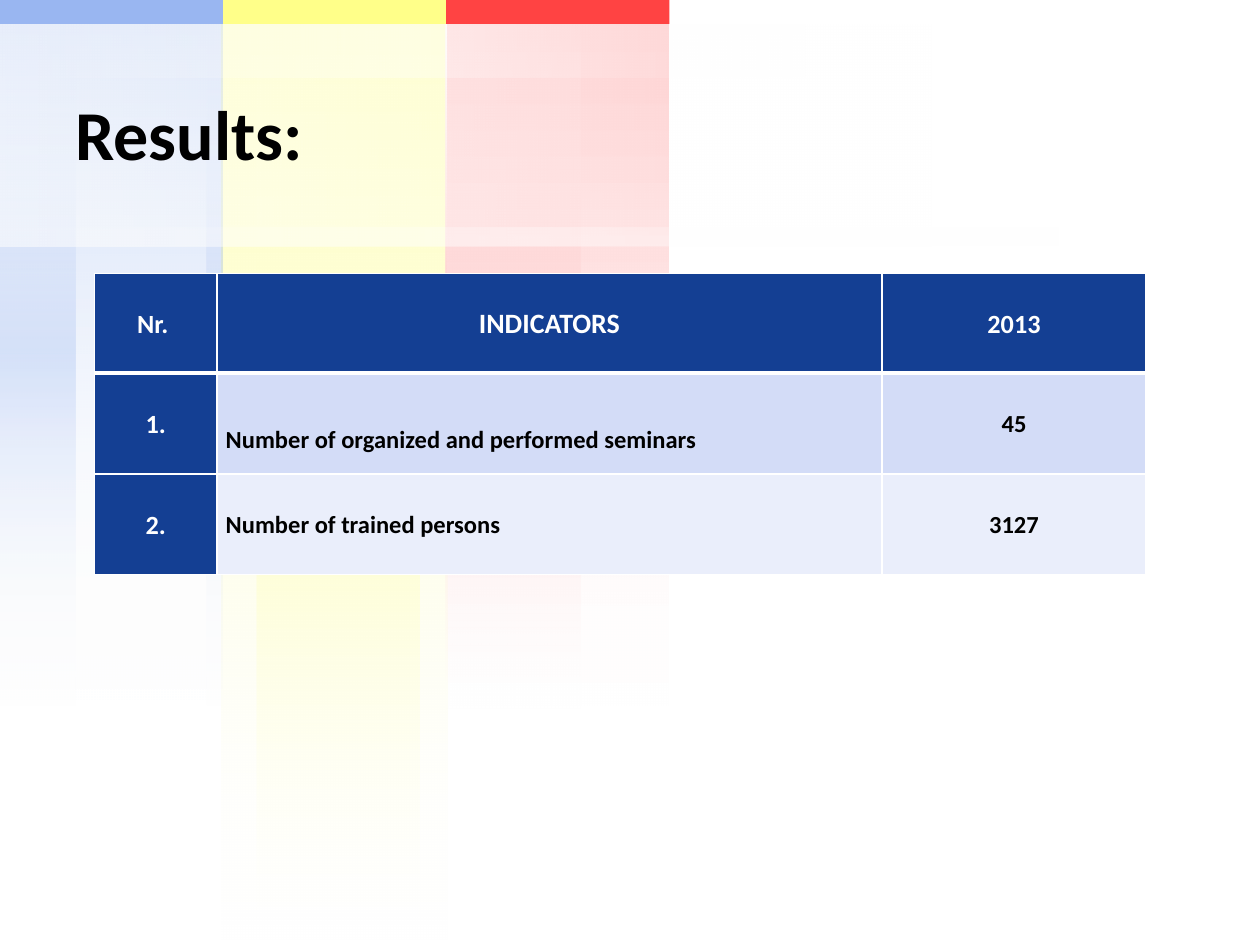
from lxml import etree
from pptx import Presentation
from pptx.dml.color import RGBColor
from pptx.enum.shapes import MSO_SHAPE
from pptx.enum.text import MSO_ANCHOR, PP_ALIGN
from pptx.oxml.ns import qn
from pptx.util import Pt

RECTANGLE = MSO_SHAPE.RECTANGLE
MIDDLE = MSO_ANCHOR.MIDDLE
LEFT, CENTER = PP_ALIGN.LEFT, PP_ALIGN.CENTER

THEME = {
    "font": "Calibri",
    "white": "FFFFFF", "black": "000000",
    "yellow": "FFFFBD", "pink": "FFC9C9", "blue": "6491EA",
    "bar_blue": "99B6F1", "bar_yellow": "FFFF89", "bar_red": "FF4343",
    "header": "143F93", "row_fills": ("D3DCF7", "EAEEFB"),
    "title_size": 40, "heading_size": 16, "label_size": 15, "body_size": 14,
}

TITLE = "Results:"
HEADER = ("Nr. ", "INDICATORS", "2013")
ROWS = (
    ("1.", "Number of organized and performed seminars", "45"),
    ("2.", "Number of trained persons", "3127"),
)
COLUMN_WIDTHS = (70, 380, 151)
ROW_HEIGHTS = (57, 57.6, 57.6)
FIRST_LABEL_DROP = 18

CLEAR = (100, "white", 0)


def fade(color, opacity=100):
    return ((0, color, opacity), CLEAR)


def glow(color, opacity=100, start=0):
    return ((0, "white", start), (50, color, opacity), CLEAR)


COLUMN_BANDS = (
    (126.72, 128.88, 540, fade("yellow")),
    (146.88, 92.88, 540, glow("yellow")),
    (126.72, 128.88, 531.36, fade("yellow")),
    (255.6, 126.72, 404.64, fade("pink")),
    (254.88, 77.04, 404.64, glow("pink", start=100)),
    (255.6, 126.72, 404.64, fade("pink")),
    (0, 127.44, 404.64, fade("blue", 20)),
    (118.08, 9.36, 404.64, glow("blue", 20)),
    (0, 43.2, 404.64, glow("blue", 20)),
    (0, 127.44, 404.64, fade("blue", 20)),
)
BAR_WIDTH, BAR_HEIGHT = 127.5, 13.7
BAR_COLORS = ("bar_blue", "bar_yellow", "bar_red")
ROW_BANDS = (
    (130.3, 10.08, 606.24, glow("white", 35)),
    (14, 126.72, 540.72, fade("white", 35)),
    (14, 30.24, 461.52, glow("white", 35)),
    (14, 126.72, 540.72, fade("white", 35)),
)


def add_rectangle(page, left, top, width, height):
    box = page.shapes.add_shape(RECTANGLE, Pt(left), Pt(top), Pt(width), Pt(height))
    box.shadow.inherit = False
    box.line.fill.background()
    return box


def set_gradient(box, stops):
    box.fill.gradient()
    gradient = box.fill._xPr.find(qn("a:gradFill"))
    gradient.set("rotWithShape", "1")
    for child in list(gradient):
        gradient.remove(child)
    stop_list = etree.SubElement(gradient, qn("a:gsLst"))
    for position, color, opacity in stops:
        stop = etree.SubElement(stop_list, qn("a:gs"), pos=str(position * 1000))
        shade = etree.SubElement(stop, qn("a:srgbClr"), val=THEME[color])
        if opacity < 100:
            etree.SubElement(shade, qn("a:alpha"), val=str(opacity * 1000))
    etree.SubElement(gradient, qn("a:lin"), ang="5400000", scaled="0")


def add_background(page):
    for left, width, height, stops in COLUMN_BANDS:
        set_gradient(add_rectangle(page, left, 0, width, height), stops)
    for index, color in enumerate(BAR_COLORS):
        bar = add_rectangle(page, index * BAR_WIDTH, 0, BAR_WIDTH, BAR_HEIGHT)
        bar.fill.solid()
        bar.fill.fore_color.rgb = RGBColor.from_string(THEME[color])
    for top, thickness, length, stops in ROW_BANDS:
        left = (length - thickness) / 2
        band = add_rectangle(page, left, top - left, thickness, length)
        band.rotation = 270
        set_gradient(band, stops)


def write(para, text, size, color):
    span = para.add_run()
    span.text = text
    span.font.name = THEME["font"]
    span.font.size = Pt(size)
    span.font.bold = True
    span.font.color.rgb = RGBColor.from_string(THEME[color])


def add_title(page):
    box = page.shapes.add_textbox(Pt(36), Pt(31.7), Pt(648), Pt(96.5))
    frame = box.text_frame
    frame.word_wrap = True
    frame.vertical_anchor = MIDDLE
    para = frame.paragraphs[0]
    para.line_spacing = Pt(40)
    write(para, TITLE, THEME["title_size"], "black")


def set_borders(cell, bottom):
    properties = cell._tc.get_or_add_tcPr()
    for index, (side, width) in enumerate(zip("LRTB", (1, 1, 1, bottom))):
        line = etree.Element(qn(f"a:ln{side}"), w=str(Pt(width)))
        fill = etree.SubElement(line, qn("a:solidFill"))
        etree.SubElement(fill, qn("a:srgbClr"), val=THEME["white"])
        properties.insert(index, line)


def fill_cell(cell, text, row, column):
    is_header = row == 0
    is_dark = is_header or column == 0
    if is_header and column == 1:
        size = THEME["heading_size"]
    else:
        size = THEME["label_size"] if is_dark else THEME["body_size"]
    cell.fill.solid()
    fill = THEME["header"] if is_dark else THEME["row_fills"][row - 1]
    cell.fill.fore_color.rgb = RGBColor.from_string(fill)
    set_borders(cell, 3 if is_header else 1)
    cell.vertical_anchor = MIDDLE
    cell.margin_left = cell.margin_right = Pt(5)
    cell.margin_top = Pt(FIRST_LABEL_DROP if (row, column) == (1, 1) else 0)
    cell.margin_bottom = Pt(0)
    para = cell.text_frame.paragraphs[0]
    para.alignment = LEFT if column == 1 and not is_header else CENTER
    para.line_spacing = 1.07
    write(para, text, size, "white" if is_dark else "black")


def add_results(page):
    content = (HEADER, *ROWS)
    table = page.shapes.add_table(
        len(content), len(HEADER), Pt(54), Pt(156.2),
        Pt(sum(COLUMN_WIDTHS)), Pt(sum(ROW_HEIGHTS)),
    ).table
    table.first_col = True
    for column, width in zip(table.columns, COLUMN_WIDTHS):
        column.width = Pt(width)
    for row, height in zip(table.rows, ROW_HEIGHTS):
        row.height = Pt(height)
    for row, texts in enumerate(content):
        for column, text in enumerate(texts):
            fill_cell(table.cell(row, column), text, row, column)


def main():
    deck = Presentation()
    deck.slide_width, deck.slide_height = Pt(720), Pt(540)
    page = deck.slides.add_slide(deck.slide_layouts[6])
    add_background(page)
    add_title(page)
    add_results(page)
    deck.save("out.pptx")


if __name__ == "__main__":
    main()
